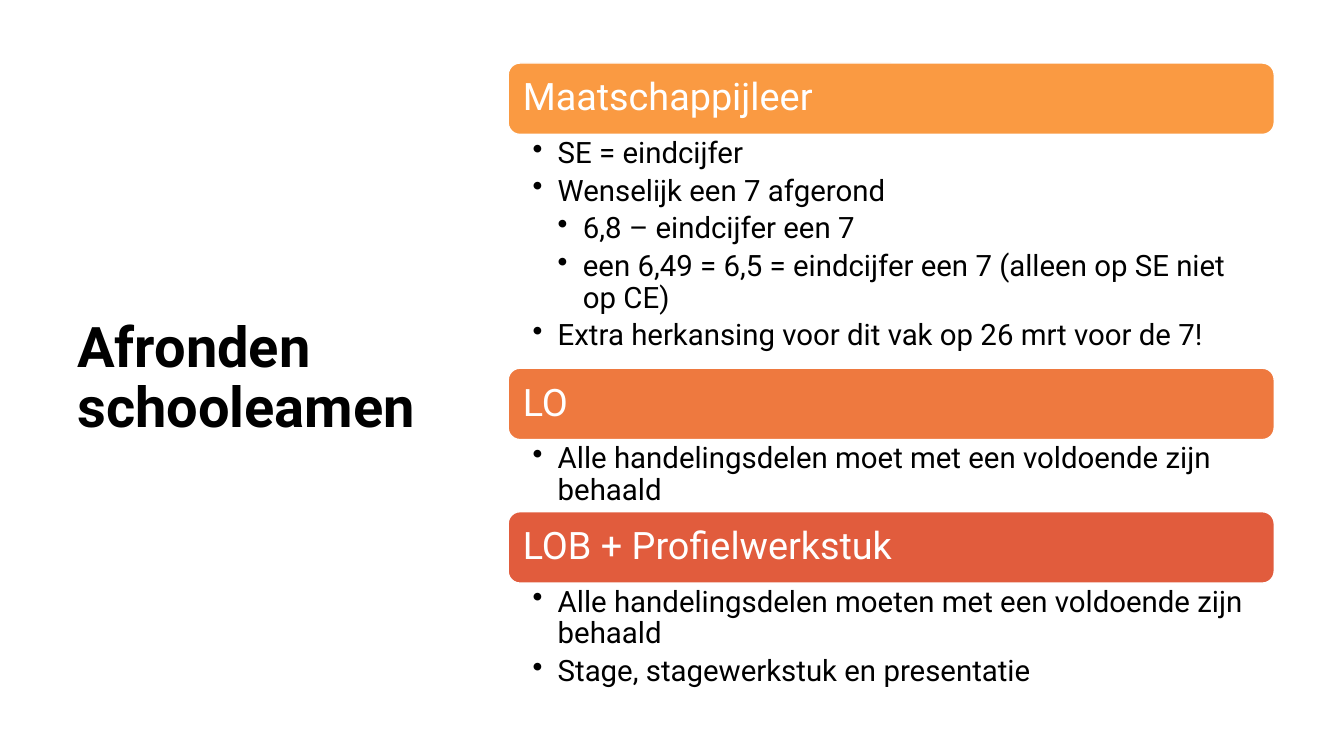
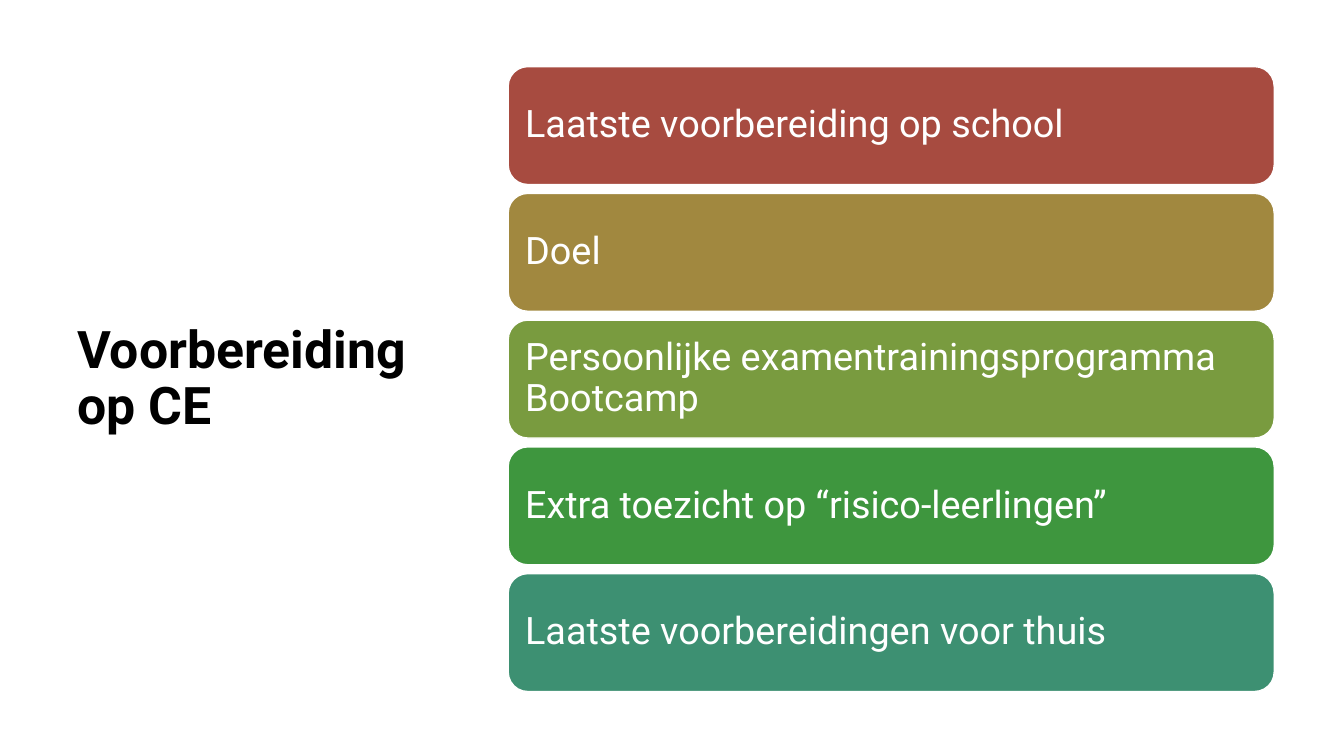
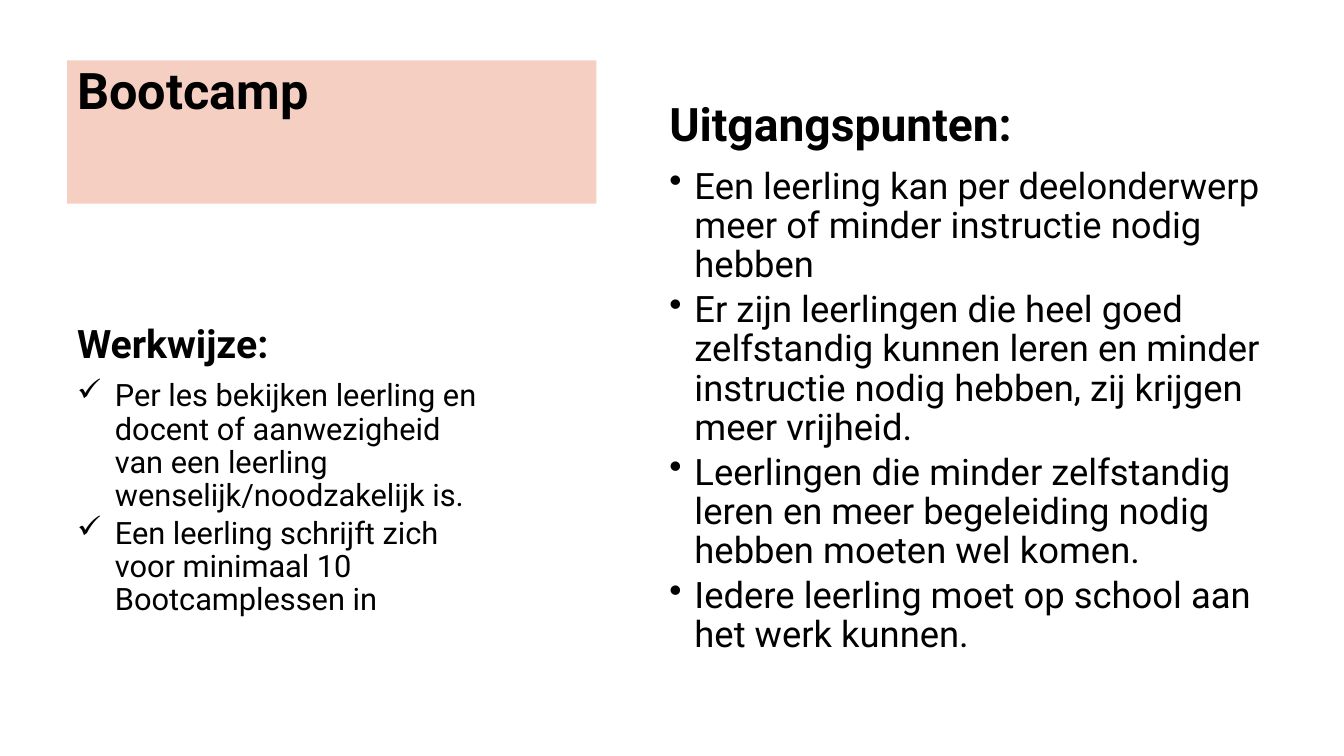
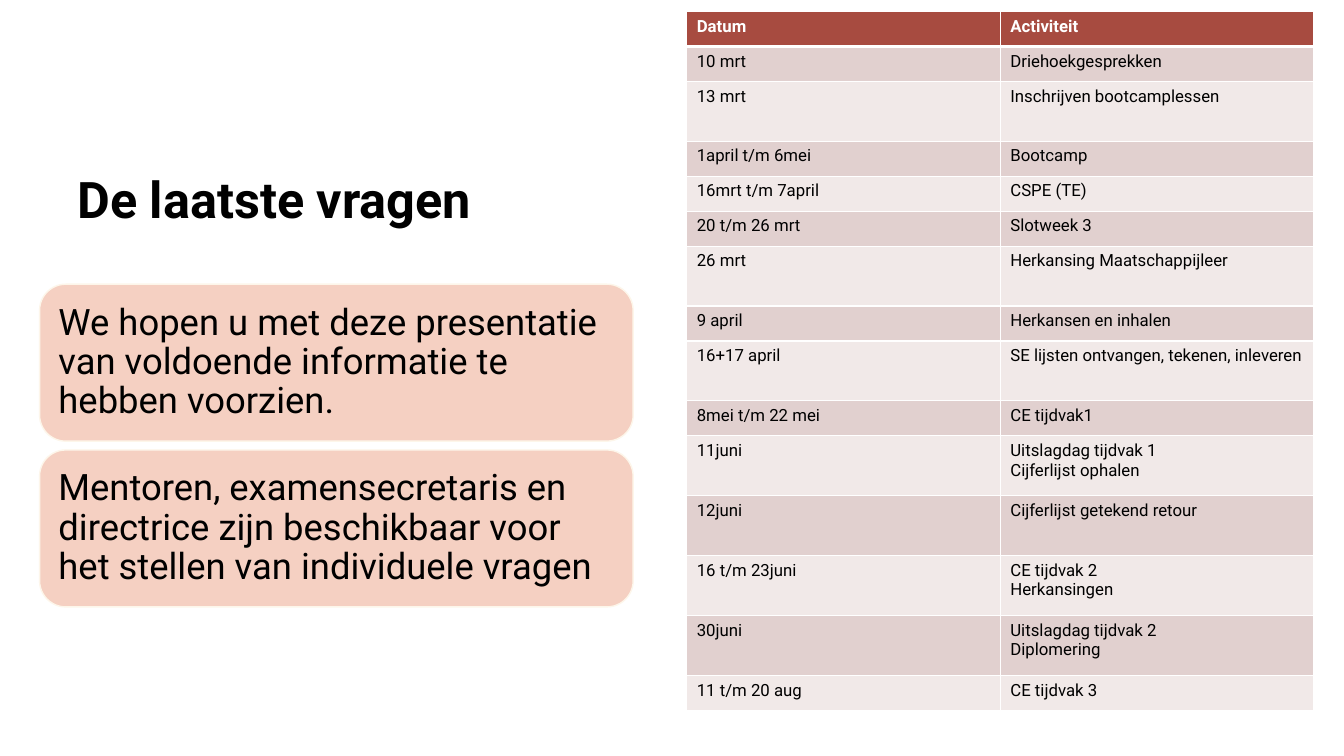
from lxml.etree import SubElement as Sub
from pptx import Presentation
from pptx.dml.color import RGBColor as RGB
from pptx.enum.shapes import MSO_SHAPE as Shape
from pptx.enum.text import MSO_ANCHOR as Anchor, MSO_AUTO_SIZE as Auto, PP_ALIGN as Align
from pptx.oxml.ns import qn
from pptx.util import Pt

FONT = "Roboto"
BLACK = RGB(0x00, 0x00, 0x00)
WHITE = RGB(0xFF, 0xFF, 0xFF)
AMBER = RGB(0xFA, 0x9A, 0x42)
ORANGE = RGB(0xEE, 0x79, 0x3F)
RED = RGB(0xE1, 0x5C, 0x3D)
BRICK = RGB(0xA7, 0x4B, 0x40)
OCHRE = RGB(0xA1, 0x88, 0x3F)
OLIVE = RGB(0x79, 0x9B, 0x3F)
GREEN = RGB(0x3E, 0x96, 0x3E)
TEAL = RGB(0x3D, 0x90, 0x72)
PEACH = RGB(0xF5, 0xD0, 0xC2)
CREAM = RGB(0xFD, 0xF6, 0xEA)
ROSE = RGB(0xE1, 0xD0, 0xCF)
PALE = RGB(0xF1, 0xE9, 0xE8)

SIDE = (48, 43.2, 275, 455.8)
RIGHT, WIDE = 363, 547.2

TOPICS = [
    ("Maatschappijleer", AMBER, 167, [
        (1, "SE = eindcijfer"),
        (1, "Wenselijk een 7 afgerond"),
        (2, "6,8 – eindcijfer een 7"),
        (2, "een 6,49 = 6,5 = eindcijfer een 7 (alleen op SE niet op CE)"),
        (1, "Extra herkansing voor dit vak op 26 mrt voor de 7!")]),
    ("LO", ORANGE, 51.5, [
        (1, "Alle handelingsdelen moet met een voldoende zijn behaald")]),
    ("LOB + Profielwerkstuk", RED, 81.4, [
        (1, "Alle handelingsdelen moeten met een voldoende zijn behaald"),
        (1, "Stage, stagewerkstuk en presentatie")]),
]
STEPS = [
    ("Laatste voorbereiding op school", BRICK),
    ("Doel", OCHRE),
    ("Persoonlijke examentrainingsprogramma Bootcamp", OLIVE),
    ("Extra toezicht op “risico-leerlingen”", GREEN),
    ("Laatste voorbereidingen voor thuis", TEAL),
]
WORK = [
    "Per les bekijken leerling en docent of aanwezigheid van een leerling "
    "wenselijk/noodzakelijk is.",
    "Een leerling schrijft zich voor minimaal 10 Bootcamplessen in",
]
POINTS = [
    "Een leerling kan per deelonderwerp meer of minder instructie nodig hebben",
    "Er zijn leerlingen die heel goed zelfstandig kunnen leren en minder instructie "
    "nodig hebben, zij krijgen meer vrijheid.",
    "Leerlingen die minder zelfstandig leren en meer begeleiding nodig hebben "
    "moeten wel komen.",
    "Iedere leerling moet op school aan het werk kunnen.",
]
CLOSING = [
    ("We hopen u met deze presentatie van voldoende informatie te hebben voorzien.", PEACH),
    ("Mentoren, examensecretaris en directrice zijn beschikbaar voor het stellen van "
     "individuele vragen", PEACH),
]
LOW, TALL = 25, 42.8
DATES = [
    ("Datum", "Activiteit", LOW),
    ("10 mrt", "Driehoekgesprekken", LOW),
    ("13 mrt", "Inschrijven bootcamplessen", TALL),
    ("1april t/m 6mei", "Bootcamp", LOW),
    ("16mrt t/m 7april", "CSPE (TE)", LOW),
    ("20 t/m 26 mrt", "Slotweek 3", LOW),
    ("26 mrt", "Herkansing Maatschappijleer", TALL),
    ("9 april", "Herkansen en inhalen", LOW),
    ("16+17 april", "SE lijsten ontvangen, tekenen, inleveren", TALL),
    ("8mei t/m 22 mei", "CE tijdvak1", LOW),
    ("11juni", "Uitslagdag tijdvak 1\nCijferlijst ophalen", TALL),
    ("12juni", "Cijferlijst getekend retour", TALL),
    ("16 t/m 23juni", "CE tijdvak 2\nHerkansingen", TALL),
    ("30juni", "Uitslagdag tijdvak 2\nDiplomering", TALL),
    ("11 t/m 20 aug", "CE tijdvak 3", LOW),
]


def place(item, box):
    """Move an item to a box of left, top, width and height."""
    item.left, item.top, item.width, item.height = map(Pt, box)


def style(par, size, color=BLACK, bold=False):
    """Set the font of a paragraph."""
    font = par.font
    font.name, font.size, font.bold = FONT, Pt(size), bold
    font.color.rgb = color


def inset(frame, left, top, right, bottom):
    """Set the margins of a wrapping text frame."""
    frame.word_wrap = True
    frame.margin_left, frame.margin_top = Pt(left), Pt(top)
    frame.margin_right, frame.margin_bottom = Pt(right), Pt(bottom)


def write(frame, text, size, color=BLACK, bold=False, after=0.0):
    """Add a left-aligned paragraph, using the first one while it is empty."""
    par = frame.paragraphs[0] if not frame.text else frame.add_paragraph()
    par.text = text
    par.alignment = Align.LEFT
    par.line_spacing = 0.9
    par.space_before, par.space_after = Pt(0), Pt(after * size)
    style(par, size, color, bold)
    return par


def bullet(frame, text, size, after, mark="•", level=1, step=18):
    """Add a paragraph with a hanging mark."""
    par = write(frame, text, size, after=after)
    props = par._p.get_or_add_pPr()
    props.set("marL", str(Pt(step * level)))
    props.set("indent", str(-Pt(step)))
    char = props.makeelement(qn("a:buChar"), {"char": mark})
    props.find(qn("a:defRPr")).addprevious(char)


def head(deck, text, size, box, anchor=Anchor.MIDDLE):
    """Add a slide with a bold title and return both."""
    slide = deck.slides.add_slide(deck.slide_layouts[5])
    title = slide.shapes.title
    place(title, box)
    frame = title.text_frame
    frame.auto_size = Auto.NONE
    frame.vertical_anchor = anchor
    inset(frame, 7.2, 3.6, 7.2, 3.6)
    write(frame, text, size, bold=True)
    return slide, title


def panel(slide, box, text, fill, size=27, color=WHITE, edge=WHITE):
    """Draw a rounded panel with its text."""
    shape = slide.shapes.add_shape(Shape.ROUNDED_RECTANGLE, *map(Pt, box))
    shape.shadow.inherit = False
    shape.fill.solid()
    shape.fill.fore_color.rgb = fill
    shape.line.color.rgb = edge
    shape.line.width = Pt(1)
    frame = shape.text_frame
    frame.vertical_anchor = Anchor.MIDDLE
    inset(frame, 8, 8, 8, 8)
    write(frame, text, size, color)


def stack(slide, box, items, gap, **look):
    """Fill a box with equal panels, one under the other."""
    left, top, width, height = box
    tall = (height - gap * (len(items) - 1)) / len(items)
    for i, (text, fill) in enumerate(items):
        panel(slide, (left, top + i * (tall + gap), width, tall), text, fill, **look)


def area(slide, box, margins):
    """Add a text box and return its frame."""
    frame = slide.shapes.add_textbox(*map(Pt, box)).text_frame
    inset(frame, *margins)
    return frame


def topics(slide, left, top, width):
    """Place each topic bar with its list below."""
    bar = 51
    for text, fill, room, lines in TOPICS:
        panel(slide, (left, top, width, bar), text, fill)
        frame = area(slide, (left, top + bar, width, room), (17.4, 2.7, 15, 2.7))
        for level, line in lines:
            bullet(frame, line, 21, 0.2, level=level)
        top += bar + room


def points(frame, title, size, lines, small, **mark):
    """Write a bold heading and its list."""
    write(frame, title, size, bold=True, after=0.35)
    for line in lines:
        bullet(frame, line, small, 0.15, **mark)


def edge(cell, tag, width):
    """Draw one white side of a cell."""
    line = Sub(cell._tc.get_or_add_tcPr(), qn("a:" + tag), w=str(Pt(width)))
    fill = Sub(line, qn("a:solidFill"))
    Sub(fill, qn("a:srgbClr"), val=str(WHITE))


def agenda(slide, left, top, width):
    """Place the table of dates."""
    high = sum(row[2] for row in DATES)
    table = slide.shapes.add_table(
        len(DATES), 2, Pt(left), Pt(top), Pt(width), Pt(high)).table
    for r, (*texts, tall) in enumerate(DATES):
        table.rows[r].height = Pt(tall)
        for c, text in enumerate(texts):
            cell = table.cell(r, c)
            cell.text = text
            for par in cell.text_frame.paragraphs:
                style(par, 12, BLACK if r else WHITE, not r)
            edge(cell, "lnL", 1)
            edge(cell, "lnR", 1)
            edge(cell, "lnT", 3 if r == 1 else 1)
            edge(cell, "lnB", 1 if r else 3)
            cell.fill.solid()
            cell.fill.fore_color.rgb = (ROSE if r % 2 else PALE) if r else BRICK


def finish(deck):
    """Build the slide on finishing the school exam."""
    slide, _ = head(deck, "Afronden schooleamen", 40, SIDE)
    topics(slide, RIGHT, 45, WIDE)


def prepare(deck):
    """Build the slide on preparing for the exam."""
    slide, _ = head(deck, "Voorbereiding op CE", 37, SIDE)
    stack(slide, (RIGHT, 47.6, WIDE, 446.4), STEPS, 6.3)


def camp(deck):
    """Build the slide on the bootcamp."""
    slide, title = head(deck, "Bootcamp", 36, (48, 43.2, 378, 102.2), Anchor.TOP)
    title.fill.solid()
    title.fill.fore_color.rgb = PEACH
    left = area(slide, (48, 228, 300, 292), (7.2, 3.6, 7.2, 3.6))
    points(left, "Werkwijze:", 28, WORK, 22, mark="✓", step=27)
    right = area(slide, (474.5, 52, 437, 437), (3.6, 3.6, 3.6, 3.6))
    right.vertical_anchor = Anchor.MIDDLE
    points(right, "Uitgangspunten:", 33, POINTS, 26)


def close(deck):
    """Build the closing slide with the dates."""
    slide, _ = head(deck, "De laatste vragen", 36, (48, 47.5, 856, 120), Anchor.BOTTOM)
    stack(slide, (28.3, 203, 424, 230.5), CLOSING, 6.3, size=26, color=BLACK, edge=CREAM)
    agenda(slide, 490.5, 8.2, 448)


def main():
    """Build and save the deck."""
    deck = Presentation()
    deck.slide_width, deck.slide_height = Pt(960), Pt(540)
    for build in (finish, prepare, camp, close):
        build(deck)
    deck.save("out.pptx")


if __name__ == "__main__":
    main()
